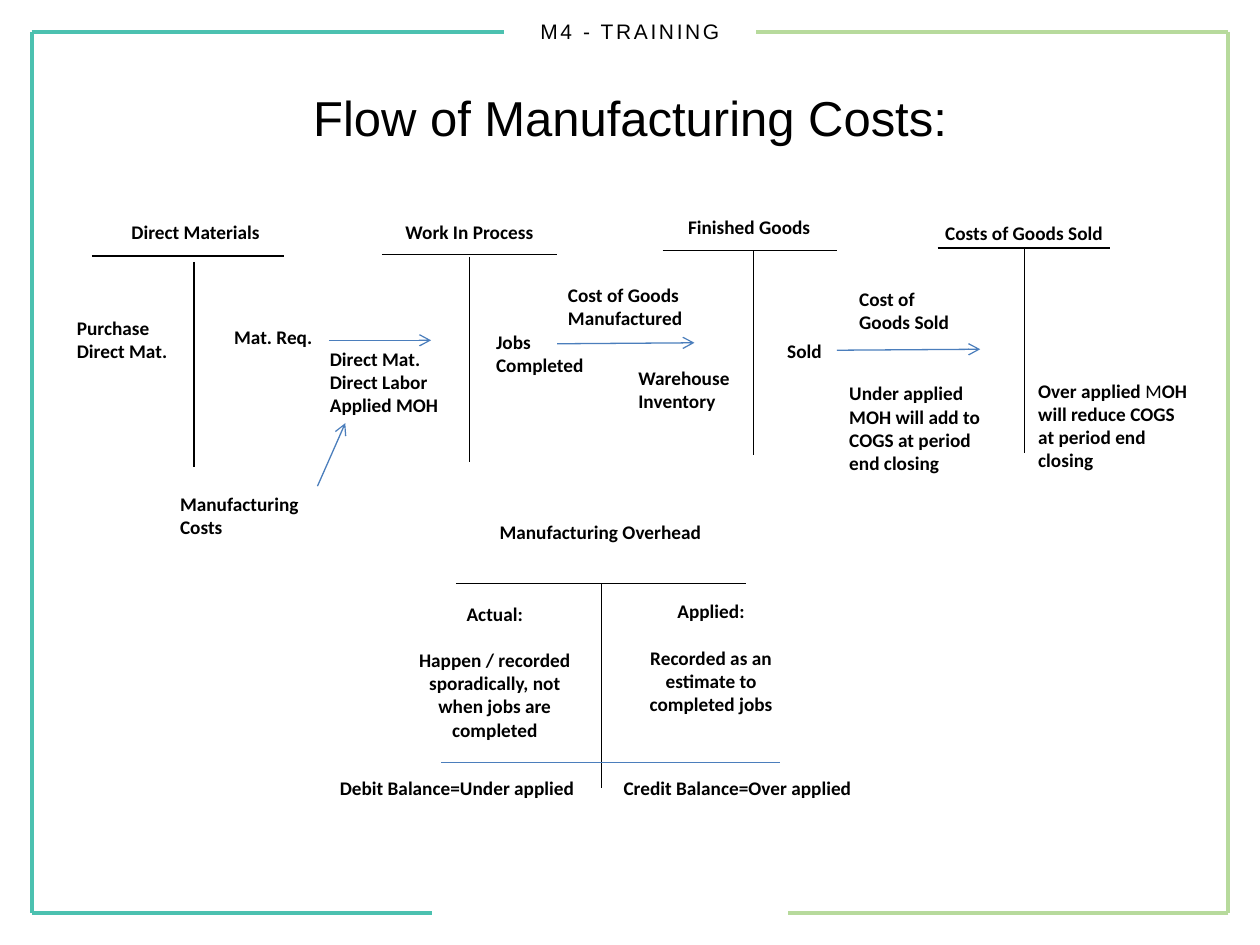
from lxml import etree
from pptx import Presentation
from pptx import util as u
from pptx.dml.color import RGBColor
from pptx.enum import shapes, text
from pptx.oxml.ns import qn

THEME = {
    "teal": "4CC1B0", "green": "B7DA9C", "blue": "4B7EBC", "ink": "000000", "paper": "FFFFFF",
    "body": "Calibri", "head": "Arial",
    "title_pt": 28, "header_pt": 12, "text_pt": 11, "frame_pt": 2.25, "line_pt": 0.75,
}

# All lengths in cm
PAGE_W, PAGE_H, MARGIN = 25.4, 19.05, 0.64
TOP_GAP, BOTTOM_GAP = 5.08, 6.35
STEM, NAME_H = 4.13, 0.61
LINE_H, PADDING = 0.465, 0.28

# name, (name left, top, width), (bar left, right, y), (stem x, top)
ACCOUNTS = [
    ("Direct Materials", (2.18, 4.32, 3.53), (1.85, 5.72, 5.16), (3.91, 5.28)),
    ("Work In Process", (7.7, 4.32, 3.53), (7.7, 11.23, 5.13), (9.47, 5.18)),
    ("Finished Goods", (13.34, 4.22, 3.53), (13.36, 16.87, 5.05), (15.19, 5.05)),
    ("Costs of Goods Sold", (18.42, 4.34, 4.45), (18.9, 22.38, 5.0), (20.65, 5.0)),
    ("Manufacturing Overhead", (9.55, 10.36, 5.11), (9.19, 15.04, 11.76), (12.12, 11.76)),
]

# heading, explanation, box
OVERHEAD = [
    ("Actual:", "Happen / recorded sporadically, not when jobs are completed", (7.92, 12.01, 4.11, 3.76)),
    ("Applied:", "Recorded as an estimate to completed jobs", (12.57, 11.96, 3.53, 2.51)),
]

# paragraphs, left, top, width, line count; a paragraph may be a list of (text, bold)
LABELS = [
    (["Purchase Direct Mat."], 1.3, 6.25, 2.49, 2),
    (["Mat. Req."], 4.47, 6.43, 2.49, 1),
    (["Direct Mat.", "Direct Labor", "Applied MOH"], 6.4, 6.88, 2.84, 3),
    (["Manufacturing Costs"], 3.38, 9.8, 3.25, 2),
    (["Jobs Completed"], 9.75, 6.53, 2.41, 2),
    (["Cost of Goods Manufactured"], 11.2, 5.59, 3.07, 2),
    (["Warehouse Inventory"], 12.62, 7.26, 2.49, 2),
    (["Sold"], 15.62, 6.71, 2.49, 1),
    (["Cost of Goods Sold"], 17.07, 5.66, 2.49, 2),
    (["Under applied MOH will add to COGS at period end closing"], 16.87, 7.57, 3.51, 4),
    ([[("Over applied", True), (" M", False), ("OH will reduce COGS at period end closing", True)]],
     20.68, 7.52, 3.66, 4),
    (["Debit Balance=Under applied"], 6.6, 15.52, 5.36, 1),
    (["Credit Balance=Over applied"], 12.32, 15.52, 5.36, 1),
]

FLOWS = [
    (6.63, 6.86, 8.69, 6.86),
    (11.23, 6.93, 14.0, 6.91),
    (16.87, 7.06, 19.76, 7.04),
    (6.4, 9.8, 6.96, 8.53),
]
BALANCE_LINE = (8.89, 15.37, 15.72, 15.37)


def color(name):
    return RGBColor.from_string(THEME[name])


def add_text(s, paragraphs, box, *, size="text_pt", font="body", bold=True, center=False,
             middle=False, fill=None, grow=False, gap=0, spacing=None):
    """Add a text box, or a filled rectangle when fill is given; gap is points between paragraphs."""
    pos = [u.Cm(v) for v in box]
    if fill:
        sp = s.shapes.add_shape(shapes.MSO_SHAPE.RECTANGLE, *pos)
        sp.shadow.inherit = False
        sp.fill.solid()
        sp.fill.fore_color.rgb = color(fill)
        sp.line.fill.background()
    else:
        sp = s.shapes.add_textbox(*pos)
    tf = sp.text_frame
    tf.word_wrap = True
    tf.auto_size = text.MSO_AUTO_SIZE.SHAPE_TO_FIT_TEXT if grow else text.MSO_AUTO_SIZE.NONE
    tf.vertical_anchor = text.MSO_ANCHOR.MIDDLE if middle else text.MSO_ANCHOR.TOP
    for i, content in enumerate(paragraphs):
        p = tf.add_paragraph() if i else tf.paragraphs[0]
        p.alignment = text.PP_ALIGN.CENTER if center else text.PP_ALIGN.LEFT
        if i and gap:
            p.space_before = u.Pt(gap)
        for words, strong in [(content, bold)] if isinstance(content, str) else content:
            r = p.add_run()
            r.text = words
            r.font.name, r.font.size = THEME[font], u.Pt(THEME[size])
            r.font.bold = strong
            r.font.color.rgb = color("ink")
            if spacing:
                r.font._element.set("spc", str(int(spacing * 100)))


def add_line(s, x1, y1, x2, y2, ink="ink", width="line_pt", arrow=False):
    ln = s.shapes.add_connector(shapes.MSO_CONNECTOR.STRAIGHT, *[u.Cm(v) for v in (x1, y1, x2, y2)])
    ln.line.color.rgb = color(ink)
    ln.line.width = u.Pt(THEME[width])
    if arrow:
        etree.SubElement(ln.line._get_or_add_ln(), qn("a:tailEnd"), type="arrow")
    etree.SubElement(ln._element.spPr, qn("a:effectLst"))


def add_frame(s):
    bottom = PAGE_H - MARGIN
    for ink, edge, side in (("teal", MARGIN, -1), ("green", PAGE_W - MARGIN, 1)):
        add_line(s, edge, MARGIN, edge, bottom, ink, "frame_pt")
        for y, gap in ((bottom, BOTTOM_GAP + 1.65 * (side < 0)), (MARGIN, TOP_GAP)):
            inner = PAGE_W / 2 + side * gap / 2
            add_line(s, edge, y, inner, y, ink, "frame_pt")


def main():
    prs = Presentation()
    prs.slide_width, prs.slide_height = u.Cm(PAGE_W), u.Cm(PAGE_H)
    s = prs.slides.add_slide(prs.slide_layouts[6])

    add_frame(s)
    heading = {"font": "head", "bold": False, "center": True, "middle": True}
    add_text(s, ["M4 - TRAINING"], (0, 0, PAGE_W, 1.27), size="header_pt", spacing=1.5, **heading)
    add_text(s, ["Flow of Manufacturing Costs:"], (1.27, 0.76, 22.86, 3.18), size="title_pt", **heading)

    for name, (x, y, w), (left, right, bar_y), (stem_x, stem_y) in ACCOUNTS:
        add_text(s, [name], (x, y, w, NAME_H), center=True, fill="paper")
        add_line(s, left, bar_y, right, bar_y)
        add_line(s, stem_x, stem_y, stem_x, stem_y + STEM)
    for title, note, box in OVERHEAD:
        add_text(s, [title, note], box, center=True, fill="paper", gap=13.4)
    add_line(s, *BALANCE_LINE, ink="blue")

    for paragraphs, x, y, w, lines in LABELS:
        add_text(s, paragraphs, (x, y, w, PADDING + LINE_H * lines), grow=True)
    for flow in FLOWS:
        add_line(s, *flow, ink="blue", arrow=True)

    prs.save("out.pptx")


if __name__ == "__main__":
    main()
